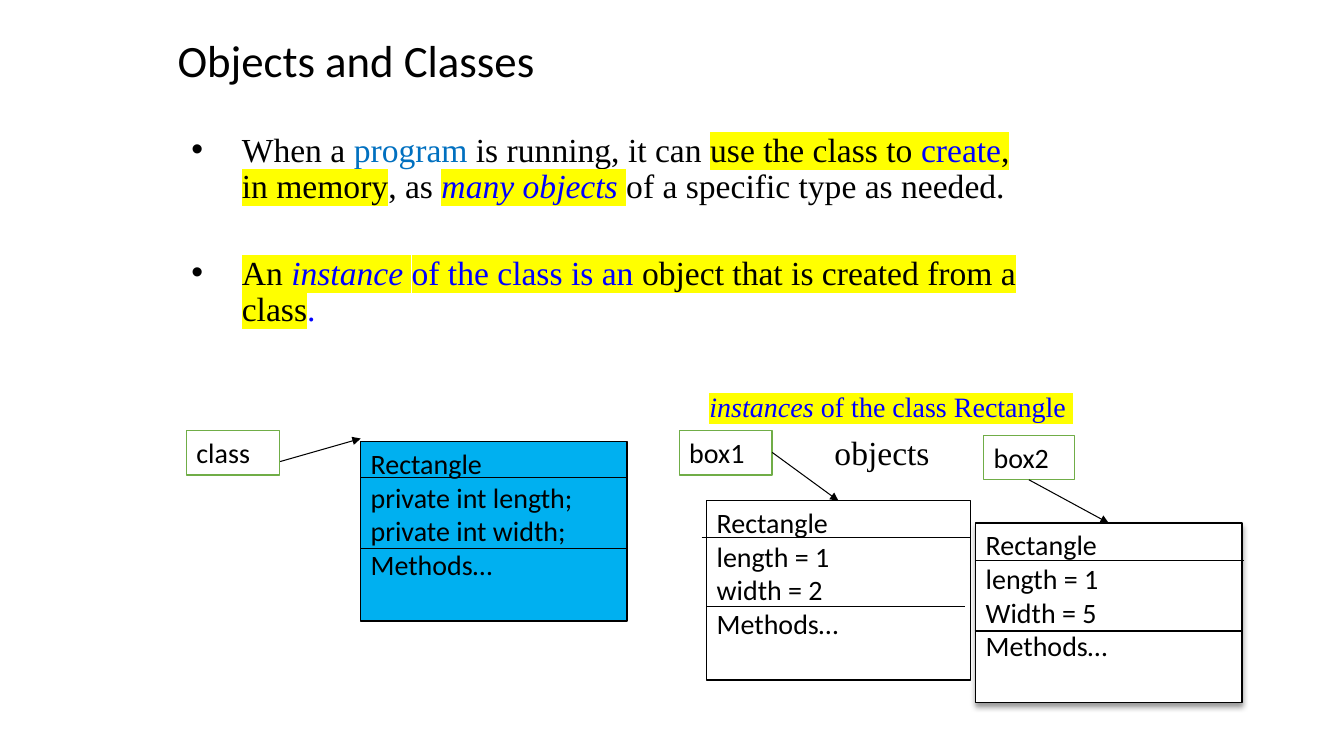
"""Build the Objects and Classes slide with one class and two of its instances."""
from lxml.etree import SubElement as Sub
from pptx import Presentation
from pptx.dml.color import RGBColor as RGB
from pptx.enum.shapes import MSO_CONNECTOR as CONN, MSO_SHAPE as SHAPE
from pptx.enum.text import MSO_ANCHOR as ANCHOR, MSO_AUTO_SIZE as AUTO, PP_ALIGN as ALIGN
from pptx.oxml.ns import qn
from pptx.util import Cm, Pt

COLORS = {"black": "000000", "white": "FFFFFF", "blue": "0000FF", "steel": "0070C0",
          "sky": "00B0F0", "green": "70AD47", "yellow": "FFFF00"}
SERIF = "Times New Roman"


def write(p, text, size=20, font="Calibri", color="black", italic=False, mark=False):
    r = p.add_run()
    r.text = text
    r.font.size = Pt(size)
    r.font.italic = italic
    r.font.color.rgb = RGB.from_string(COLORS[color])
    if mark:
        highlight = Sub(r.font._element, qn("a:highlight"))
        Sub(highlight, qn("a:srgbClr"), val=COLORS["yellow"])
    r.font.name = font


def draw_line(x1, y1, x2, y2, arrow=False):
    line = s.shapes.add_connector(CONN.STRAIGHT, Cm(x1), Cm(y1), Cm(x2), Cm(y2))
    line.line.color.rgb = RGB.from_string(COLORS["black"])
    line.line.width = Pt(0.75)
    if arrow:
        Sub(line.line._get_or_add_ln(), qn("a:tailEnd"), type="triangle")
    Sub(line._element.spPr, qn("a:effectLst"))


prs = Presentation()
prs.slide_width, prs.slide_height = Cm(33.87), Cm(19.05)
s = prs.slides.add_slide(prs.slide_layouts[1])
title, body = s.placeholders

title.left, title.top, title.width, title.height = Cm(4.22), Cm(0.86), Cm(10.52), Cm(1.78)
tf = title.text_frame
tf.auto_size = AUTO.NONE
tf.vertical_anchor = ANCHOR.TOP
p = tf.paragraphs[0]
p.alignment = ALIGN.LEFT
p.line_spacing = 0.9
write(p, "Objects and Classes", size=32)

body.left, body.top, body.width, body.height = Cm(4.57), Cm(3.23), Cm(21.79), Cm(12.7)
bullets = [
    [("When a ", {}),
     ("program", {"color": "steel"}),
     (" is running, it can ", {}),
     ("use the class to ", {"mark": True}),
     ("create", {"color": "blue", "mark": True}),
     (", in memory", {"mark": True}),
     (", as ", {}),
     ("many objects ", {"color": "blue", "italic": True, "mark": True}),
     ("of a specific type as needed.", {})],
    [("An ", {"mark": True}),
     ("instance ", {"color": "blue", "italic": True, "mark": True}),
     ("of the class is an ", {"color": "blue", "mark": True}),
     ("object that is created from a class", {"mark": True}),
     (".", {"color": "blue"})],
]
tf = body.text_frame
tf.auto_size = AUTO.NONE
for i, runs in enumerate(bullets):
    p = tf.paragraphs[0] if i == 0 else tf.add_paragraph()
    p.line_spacing = 0.9
    p.space_before = Pt(36 * i)
    pPr = p._element.get_or_add_pPr()
    pPr.set("marL", str(Cm(1.27)))
    pPr.set("indent", str(Cm(-1.27)))
    Sub(pPr, qn("a:buFont"), typeface="Arial")
    Sub(pPr, qn("a:buChar"), char="•")
    for text, fmt in runs:
        write(p, text, size=24, font=SERIF, **fmt)

class_lines = ["Rectangle", "private int length;", "private int width;", "Methods…"]
box1_lines = ["Rectangle", "length = 1", "width = 2", "Methods…"]
box2_lines = ["Rectangle", "length = 1", "Width = 5", "Methods…"]
boxes = [
    (9.09, 11.13, 6.71, 4.52, "sky", "black", class_lines),
    (17.81, 12.62, 6.65, 4.52, "white", "black", box1_lines),
    (24.59, 13.18, 6.71, 4.52, "white", "black", box2_lines),
    (4.7, 10.85, 2.34, 1.12, "white", "green", ["class"]),
    (17.12, 10.85, 2.34, 1.12, "white", "green", ["box1"]),
    (24.79, 10.97, 2.29, 1.12, "white", "green", ["box2"]),
]
for x, y, w, h, fill, edge, lines in boxes:
    sp = s.shapes.add_shape(SHAPE.RECTANGLE, Cm(x), Cm(y), Cm(w), Cm(h))
    sp.shadow.inherit = False
    sp.fill.solid()
    sp.fill.fore_color.rgb = RGB.from_string(COLORS[fill])
    sp.line.color.rgb = RGB.from_string(COLORS[edge])
    sp.line.width = Pt(1)
    if lines is box2_lines:
        effects = sp._element.spPr.find(qn("a:effectLst"))
        shadow = Sub(effects, qn("a:outerShdw"), blurRad=str(Pt(4)), dist=str(Pt(3)),
                     dir="5400000", rotWithShape="0")
        tint = Sub(shadow, qn("a:srgbClr"), val=COLORS["black"])
        Sub(tint, qn("a:alpha"), val="40000")
    tf = sp.text_frame
    tf.word_wrap = True
    tf.vertical_anchor = ANCHOR.TOP
    for i, text in enumerate(lines):
        p = tf.paragraphs[0] if i == 0 else tf.add_paragraph()
        p.alignment = ALIGN.LEFT
        write(p, text)

dividers = [
    (9.09, 15.8, 12.04), (9.09, 15.8, 13.82),
    (17.68, 24.46, 13.54), (17.81, 24.33, 15.29),
    (24.59, 31.34, 14.12), (24.56, 31.27, 15.9),
]
for x1, x2, y in dividers:
    draw_line(x1, y, x2, y)

arrows = [(7.06, 11.63, 9.09, 11.05), (19.46, 11.4, 21.13, 12.62), (25.93, 12.09, 27.94, 13.18)]
for ends in arrows:
    draw_line(*ends, arrow=True)

captions = [
    (20.78, 10.77, 3.02, 1.3, [("objects", {"size": 24})]),
    (17.63, 9.7, 9.93, 1.12,
     [("instances ", {"color": "blue", "italic": True, "mark": True}),
      ("of the class Rectangle ", {"color": "blue", "mark": True})]),
]
for x, y, w, h, runs in captions:
    tf = s.shapes.add_textbox(Cm(x), Cm(y), Cm(w), Cm(h)).text_frame
    tf.word_wrap = True
    for text, fmt in runs:
        write(tf.paragraphs[0], text, font=SERIF, **fmt)

prs.save("out.pptx")
